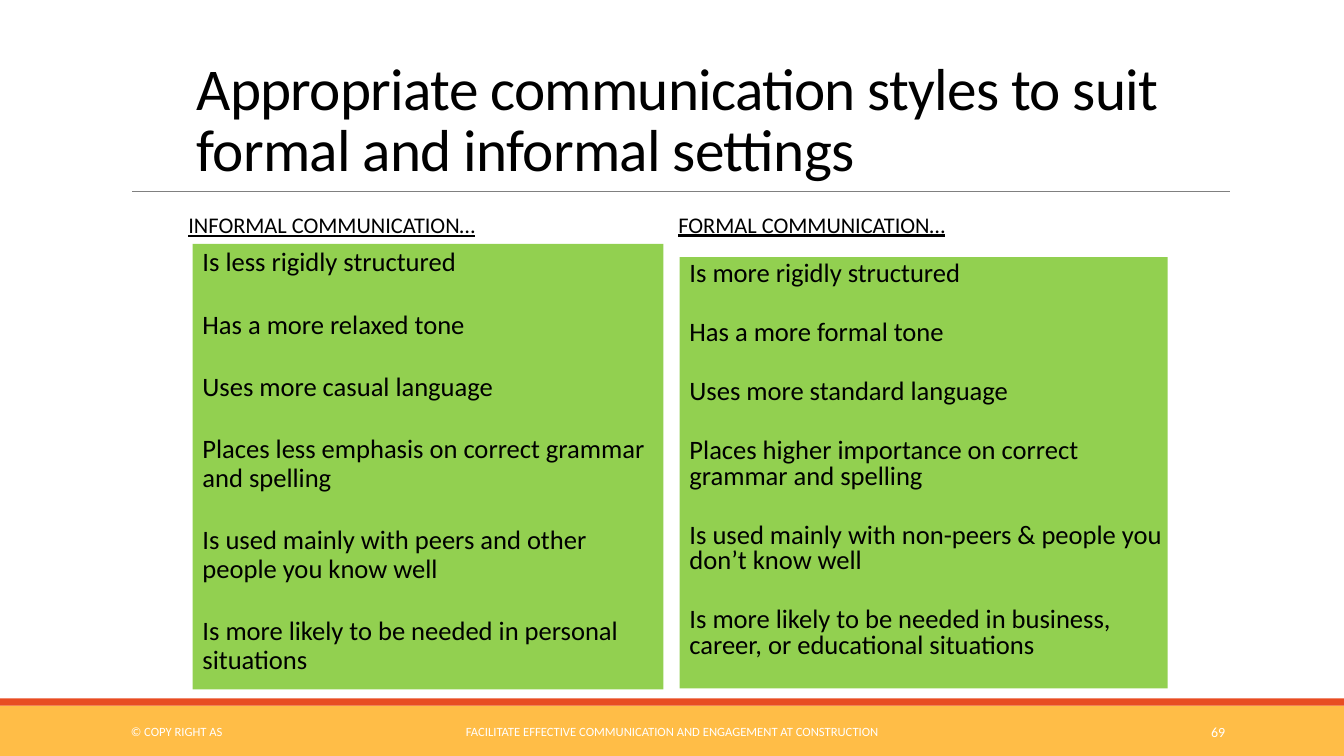
import pptx
import pptx.util
import pptx.dml.color
import pptx.enum.shapes
import pptx.enum.text
import lxml.etree

Inches, Pt = pptx.util.Inches, pptx.util.Pt
ALIGN = pptx.enum.text.PP_ALIGN
ANCHOR = pptx.enum.text.MSO_ANCHOR

BLACK, WHITE, GREEN = "000000", "FFFFFF", "92D050"
TITLE = "Appropriate communication styles to suit formal and informal settings"
BANDS = [  # top, height, colour
    (7, 0.5, "FFBD47"),
    (6.93, 0.07, "E84C22"),
]
COLUMNS = [
    {
        "head": "INFORMAL COMMUNICATION…",
        "head_at": (1.77, 1.87, 4.58, 0.75),
        "list_at": (1.91, 2.42, 4.67, 4.42),
        "leading": 0.9,
        "items": [
            "Is less rigidly structured",
            "Has a more relaxed tone",
            "Uses more casual language",
            "Places less emphasis on correct grammar and spelling",
            "Is used mainly with peers and other people you know well",
            "Is more likely to be needed in personal situations",
        ],
    },
    {
        "head": "FORMAL COMMUNICATION…",
        "head_at": (6.63, 1.93, 4.42, 0.62),
        "list_at": (6.74, 2.55, 4.84, 4.28),
        "leading": 0.8,
        "items": [
            "Is more rigidly structured",
            "Has a more formal tone",
            "Uses more standard language",
            "Places higher importance on correct grammar and spelling",
            "Is used mainly with non-peers & people you don’t know well",
            "Is more likely to be needed in business, career, or educational situations",
        ],
    },
]
FOOTERS = [  # text, left, width, size, alignment
    ("© COPY RIGHT AS", 1.2, 2.7, 9, ALIGN.LEFT),
    ("FACILITATE EFFECTIVE COMMUNICATION AND ENGAGEMENT AT CONSTRUCTION",
     4.03, 5.27, 9, ALIGN.CENTER),
    ("69", 10.82, 1.43, 10, ALIGN.RIGHT),
]


def paint(target, color):
    target.rgb = pptx.dml.color.RGBColor.from_string(color)


def write(shape, lines, size, color=BLACK, align=ALIGN.LEFT, anchor=ANCHOR.MIDDLE,
          leading=1.0, before=0, after=0):
    """Fill a shape with one paragraph per line and return the runs."""
    frame = shape.text_frame
    frame.word_wrap = True
    frame.auto_size = pptx.enum.text.MSO_AUTO_SIZE.NONE
    frame.vertical_anchor = anchor
    runs = []
    for i, line in enumerate(lines):
        para = frame.add_paragraph() if i else frame.paragraphs[0]
        para.alignment = align
        para.line_spacing = leading
        para.space_before, para.space_after = Pt(before), Pt(after)
        run = para.add_run()
        run.text = line
        run.font.name, run.font.size = "Calibri", Pt(size)
        paint(run.font.color, color)
        runs.append(run)
    return runs


def block(slide, at, color):
    shape = slide.shapes.add_shape(
        pptx.enum.shapes.MSO_SHAPE.RECTANGLE, *map(Inches, at))
    shape.shadow.inherit = False
    shape.fill.solid()
    paint(shape.fill.fore_color, color)
    shape.line.fill.background()
    return shape


def label(slide, at):
    return slide.shapes.add_textbox(*map(Inches, at))


def main():
    deck = pptx.Presentation()
    deck.slide_width, deck.slide_height = Inches(13.33), Inches(7.5)
    slide = deck.slides.add_slide(deck.slide_layouts[5])

    for top, height, color in BANDS:
        block(slide, (0, top, 13.33, height), color)

    rule = slide.shapes.add_connector(
        pptx.enum.shapes.MSO_CONNECTOR.STRAIGHT,
        Inches(1.31), Inches(1.9), Inches(12.2), Inches(1.9))
    paint(rule.line.color, "808080")
    rule.line.width = Pt(0.5)
    lxml.etree.SubElement(rule.line._get_or_add_ln().getparent(),
                          pptx.oxml.ns.qn("a:effectLst"))

    title = slide.shapes.title
    title.left, title.top = Inches(1.85), Inches(0.62)
    title.width, title.height = Inches(10.15), Inches(1.25)
    for run in write(title, [TITLE], 42.3, anchor=ANCHOR.BOTTOM, leading=0.85):
        run.font._element.set("spc", "-50")

    for col in COLUMNS:
        head = label(slide, col["head_at"])
        for run in write(head, [col["head"]], 16, leading=0.9, before=12, after=2):
            run.font.underline = True
        panel = block(slide, col["list_at"], GREEN)
        panel.text_frame.margin_left = Inches(0.1)
        panel.text_frame.margin_right = 0
        write(panel, col["items"], 19, anchor=ANCHOR.TOP,
              leading=col["leading"], before=12, after=12)

    for text, left, width, size, align in FOOTERS:
        write(label(slide, (left, 7.06, width, 0.4)), [text], size, WHITE, align)

    deck.save("out.pptx")


if __name__ == "__main__":
    main()
